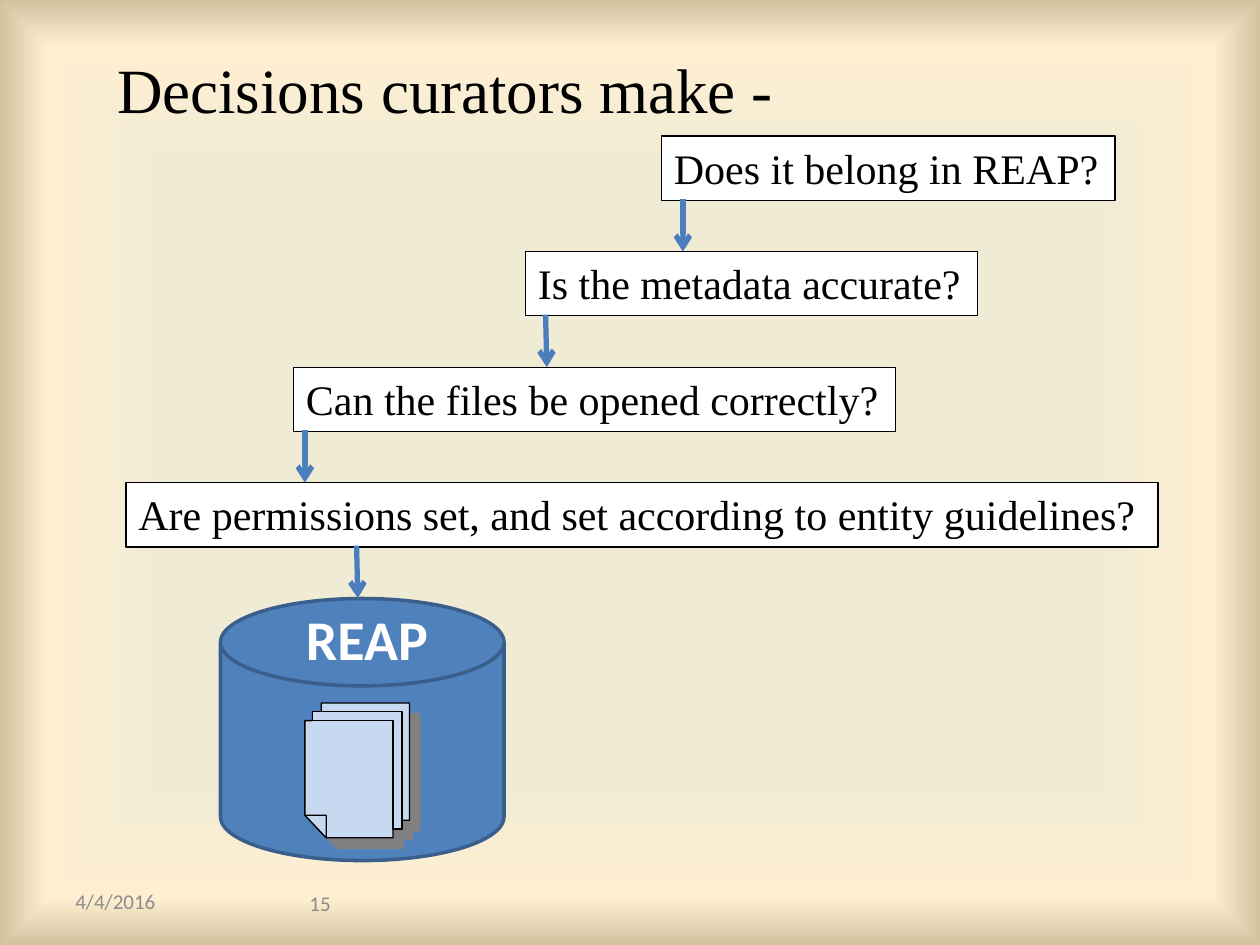
from dataclasses import dataclass

from pptx import Presentation
from pptx.dml.color import RGBColor
from pptx.enum.shapes import MSO_CONNECTOR, MSO_SHAPE
from pptx.enum.text import MSO_ANCHOR, MSO_AUTO_SIZE, PP_ALIGN
from pptx.oxml import parse_xml
from pptx.oxml.ns import nsdecls, qn
from pptx.util import Inches, Pt

COLORS = {
    "ink": "000000",
    "paper": "FFFFFF",
    "footer": "8C8C8C",
    "disk": "4F81BD",
    "disk_edge": "3A5F8C",
    "arrow": "4B7EBC",
    "sheet": "C6D9F1",
    "shade": "808080",
    "center": "F0EBD5",
    "cream": "FFEFD1",
    "rim": "D1C39F",
}
SERIF = "Times New Roman"
SANS = "Calibri"


@dataclass
class Label:
    text: str
    left: float
    top: float
    width: float
    height: float
    size: int
    font: str = SERIF
    color: str = "ink"
    bold: bool = False
    align: PP_ALIGN = PP_ALIGN.LEFT
    anchor: MSO_ANCHOR = MSO_ANCHOR.TOP
    wrap: bool = False


@dataclass
class Step:
    question: str
    left: float
    width: float
    arrow_start: float
    arrow_end: float


def rgb(name: str) -> RGBColor:
    return RGBColor.from_string(COLORS[name])


def paint(shape, fill: str, line: str, points: float) -> None:
    shape.fill.solid()
    shape.fill.fore_color.rgb = rgb(fill)
    shape.line.color.rgb = rgb(line)
    shape.line.width = Pt(points)


def write(shape, label: Label) -> None:
    shape.left, shape.top = Inches(label.left), Inches(label.top)
    shape.width, shape.height = Inches(label.width), Inches(label.height)
    frame = shape.text_frame
    frame.text = label.text
    frame.word_wrap = label.wrap
    frame.auto_size = MSO_AUTO_SIZE.NONE if label.wrap else MSO_AUTO_SIZE.SHAPE_TO_FIT_TEXT
    frame.vertical_anchor = label.anchor
    paragraph = frame.paragraphs[0]
    paragraph.alignment = label.align
    font = paragraph.runs[0].font
    font.name, font.size, font.bold = label.font, Pt(label.size), label.bold
    font.color.rgb = rgb(label.color)


def add_label(slide, label: Label):
    box = slide.shapes.add_textbox(0, 0, 0, 0)
    write(box, label)
    return box


def add_arrow(slide, start_x: float, start_y: float, end_x: float, end_y: float) -> None:
    arrow = slide.shapes.add_connector(
        MSO_CONNECTOR.STRAIGHT,
        Inches(start_x), Inches(start_y), Inches(end_x), Inches(end_y),
    )
    arrow.line.color.rgb = rgb("arrow")
    arrow.line.width = Pt(3)
    arrow.line._get_or_add_ln().append(parse_xml(f'<a:tailEnd {nsdecls("a")} type="arrow"/>'))
    arrow._element.spPr.append(parse_xml(f'<a:effectLst {nsdecls("a")}/>'))


def add_outline(slide, points: list[tuple[float, float]]):
    corners = [(Inches(x), Inches(y)) for x, y in points]
    builder = slide.shapes.build_freeform(*corners[0])
    builder.add_line_segments(corners[1:], close=True)
    outline = builder.convert_to_shape()
    outline.shadow.inherit = False
    paint(outline, "sheet", "ink", 0.75)
    return outline


def add_documents(slide) -> None:
    stack = add_outline(slide, [
        (2.42, 6.47), (2.42, 5.72), (2.48, 5.72), (2.48, 5.65), (2.55, 5.65),
        (2.55, 5.58), (3.25, 5.58), (3.25, 6.51), (3.19, 6.51), (3.19, 6.58),
        (3.12, 6.58), (3.12, 6.65), (2.59, 6.65),
    ])
    stack._element.spPr.find(qn("a:effectLst")).append(parse_xml(
        f'<a:outerShdw {nsdecls("a")} dist="{Pt(8.5)}" dir="2700000" algn="ctr" '
        f'rotWithShape="0"><a:srgbClr val="{COLORS["shade"]}"/></a:outerShdw>'
    ))
    add_outline(slide, [
        (2.55, 5.65), (3.19, 5.65), (3.19, 6.58), (3.12, 6.58),
        (3.12, 5.72), (2.48, 5.72), (2.48, 5.65),
    ])
    add_outline(slide, [(2.42, 6.47), (2.59, 6.47), (2.59, 6.65)])


def set_background(slide) -> None:
    slide.background.fill.gradient()
    gradient = slide._element.find(".//" + qn("a:gradFill"))
    for child in list(gradient):
        gradient.remove(child)
    stops = "".join(
        f'<a:gs pos="{percent * 1000}"><a:srgbClr val="{COLORS[name]}"/></a:gs>'
        for percent, name in [(65, "center"), (90, "cream"), (100, "rim")]
    )
    gradient.append(parse_xml(f'<a:gsLst {nsdecls("a")}>{stops}</a:gsLst>'))
    gradient.append(parse_xml(
        f'<a:path {nsdecls("a")} path="shape">'
        '<a:fillToRect l="50000" t="50000" r="50000" b="50000"/></a:path>'
    ))


def main() -> None:
    deck = Presentation()
    deck.slide_width, deck.slide_height = Inches(10), Inches(7.5)
    slide = deck.slides.add_slide(deck.slide_layouts[5])
    set_background(slide)

    middle = MSO_ANCHOR.MIDDLE
    write(slide.shapes.title, Label("Decisions curators make -", 0.83, 0.33, 6.17, 0.75, 36,
                                    anchor=middle, wrap=True))
    add_label(slide, Label("4/4/2016", 0.5, 6.95, 1.17, 0.4, 12, SANS, "footer",
                           anchor=middle, wrap=True))
    add_label(slide, Label("15", 1.83, 6.97, 1.42, 0.4, 12, SANS, "footer",
                           align=PP_ALIGN.CENTER, anchor=middle, wrap=True))

    disk = slide.shapes.add_shape(MSO_SHAPE.FLOWCHART_MAGNETIC_DISK,
                                  Inches(1.75), Inches(4.75), Inches(2.25), Inches(2.08))
    disk.shadow.inherit = False
    paint(disk, "disk", "disk_edge", 2)
    add_documents(slide)
    add_label(slide, Label("REAP", 2.33, 4.75, 1.18, 0.64, 32, SANS, "paper", bold=True))

    steps = [
        Step("Does it belong in REAP?", 5.25, 3.6, 5.42, 5.42),
        Step("Is the metadata accurate?", 4.17, 3.59, 4.33, 4.34),
        Step("Can the files be opened correctly?", 2.33, 4.78, 2.42, 2.42),
        Step("Are permissions set, and set according to entity guidelines?",
             1, 8.19, 2.83, 2.84),
    ]
    first_top, pitch, box_height, arrow_offset = 1.08, 0.917, 0.51, 0.5
    for index, step in enumerate(steps):
        top = first_top + index * pitch
        box = add_label(slide, Label(step.question, step.left, top, step.width, box_height, 24))
        paint(box, "paper", "ink", 0.75)
        add_arrow(slide, step.arrow_start, top + arrow_offset, step.arrow_end, top + pitch)

    deck.save("out.pptx")


if __name__ == "__main__":
    main()
